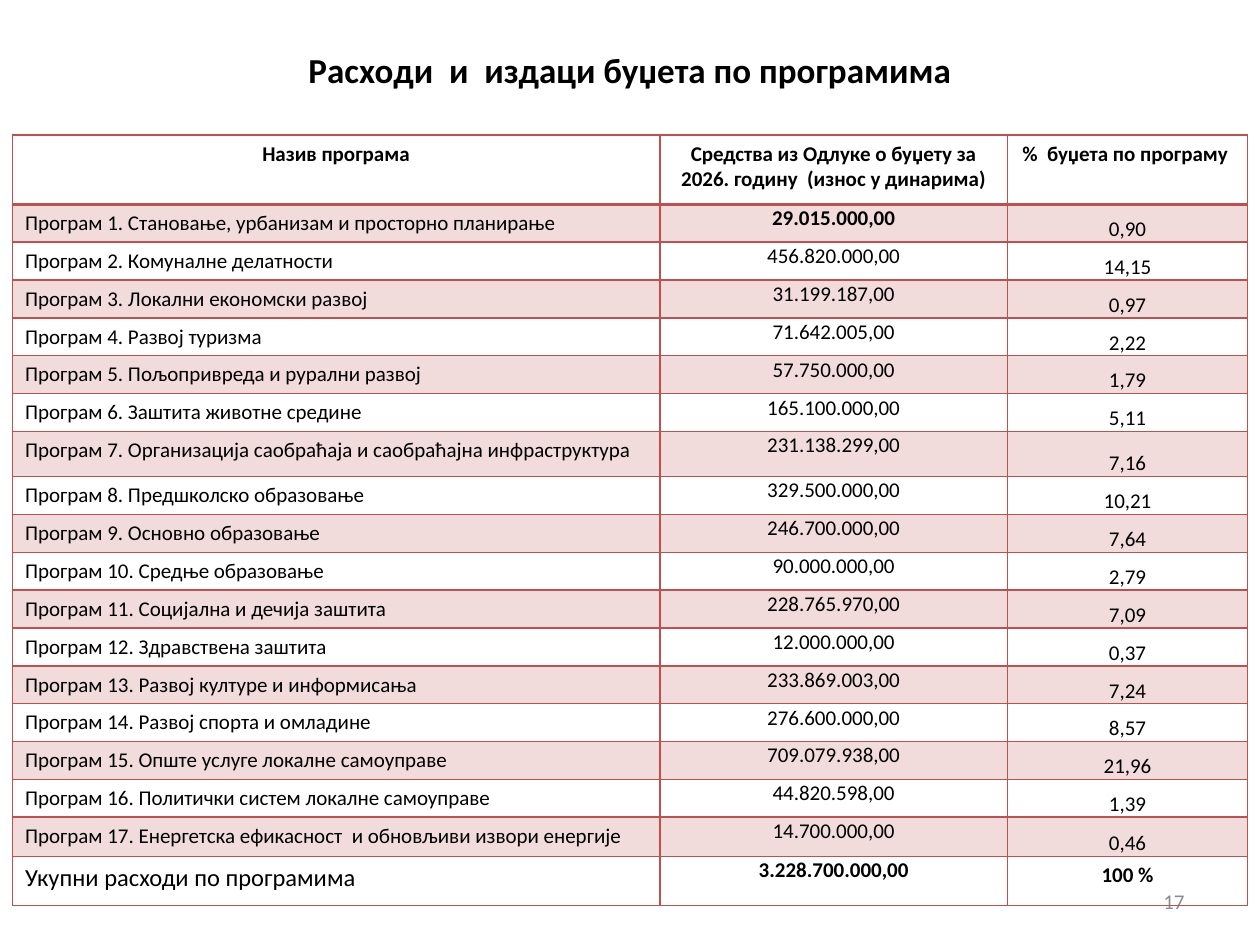
from lxml.etree import SubElement
from pptx import Presentation
from pptx.dml.color import RGBColor
from pptx.enum.text import MSO_ANCHOR, PP_ALIGN
from pptx.oxml.ns import qn
from pptx.util import Cm, Pt

# Content
title = "Расходи  и  издаци буџета по програмима"
page = "17"
head = (
    "Назив програма",
    "Средства из Одлуке о буџету за 2026. годину  (износ у динарима)",
    "%  буџета по програму ",
)
items = [
    ("Становање, урбанизам и просторно планирање", "29.015.000,00", "0,90"),
    ("Комуналне делатности", "456.820.000,00", "14,15"),
    ("Локални економски развој", "31.199.187,00", "0,97"),
    ("Развој туризма", "71.642.005,00", "2,22"),
    ("Пољопривреда и рурални развој", "57.750.000,00", "1,79"),
    ("Заштита животне средине", "165.100.000,00", "5,11"),
    ("Организација саобраћаја и саобраћајна инфраструктура",
     "231.138.299,00", "7,16"),
    ("Предшколско образовање", "329.500.000,00", "10,21"),
    ("Основно образовање", "246.700.000,00", "7,64"),
    ("Средње образовање", "90.000.000,00", "2,79"),
    ("Социјална и дечија заштита", "228.765.970,00", "7,09"),
    ("Здравствена заштита", "12.000.000,00", "0,37"),
    ("Развој културе и информисања", "233.869.003,00", "7,24"),
    ("Развој спорта и омладине", "276.600.000,00", "8,57"),
    ("Опште услуге локалне самоуправе", "709.079.938,00", "21,96"),
    ("Политички систем локалне самоуправе", "44.820.598,00", "1,39"),
    ("Енергетска ефикасност  и обновљиви извори енергије",
     "14.700.000,00", "0,46"),
]
total = ("Укупни расходи по програмима", "3.228.700.000,00", "100 %")

theme = {
    "font": "Calibri", "ink": "000000", "mute": "8C8C8C", "red": "C0504D",
    "tint": 20, "title": 20, "body": 12, "sum": 14, "line": 1, "rule": 2,
}

# Sizes in centimetres
widths = (13.05, 7.01, 4.84)
step = 0.74
tall = {0: 1.4, 7: 0.91, 17: 0.79, 18: 0.99}  # rows that differ from step


def style(par, size, color, bold=False, align=PP_ALIGN.LEFT):
    par.alignment = align
    for run in par.runs:
        font = run.font
        font.name, font.size, font.bold = theme["font"], Pt(size), bold
        font.color.rgb = RGBColor.from_string(color)


def label(slide, text, place, *look):
    frame = slide.shapes.add_textbox(*map(Cm, place)).text_frame
    frame.word_wrap = True
    frame.vertical_anchor = MSO_ANCHOR.MIDDLE
    frame.text = text
    style(frame.paragraphs[0], *look)


def border(cell, row):
    props = cell._tc.get_or_add_tcPr()
    for side in "LRTB":
        thick = (row, side) in ((0, "B"), (1, "T"))
        width = theme["rule" if thick else "line"]
        line = SubElement(props, qn(f"a:ln{side}"), w=str(Pt(width)))
        fill = SubElement(line, qn("a:solidFill"))
        SubElement(fill, qn("a:srgbClr"), val=theme["red"])


def shade(cell):
    cell.fill.solid()
    cell.fill.fore_color.rgb = RGBColor.from_string(theme["red"])
    color = cell._tc.tcPr.find(qn("a:solidFill"))[0]
    SubElement(color, qn("a:alpha"), val=str(theme["tint"] * 1000))


def main():
    deck = Presentation()
    deck.slide_width, deck.slide_height = Cm(25.4), Cm(19.05)
    slide = deck.slides.add_slide(deck.slide_layouts[6])

    # Title and page number
    label(slide, title, (1.88, 0.33, 21.64, 2.16),
          theme["title"], theme["ink"], True, PP_ALIGN.CENTER)
    label(slide, page, (18.21, 17.65, 5.92, 1.02),
          theme["body"], theme["mute"], False, PP_ALIGN.RIGHT)

    # Table grid
    names = [(f"Програм {n}. {name}", cash, part)
             for n, (name, cash, part) in enumerate(items, 1)]
    rows = [head, *names, total]
    last = len(rows) - 1
    highs = [tall.get(r, step) for r in range(len(rows))]
    grid = slide.shapes.add_table(
        len(rows), len(widths), Cm(0.25), Cm(2.72),
        Cm(sum(widths)), Cm(sum(highs))).table
    grid.first_row = grid.horz_banding = False
    for col, width in zip(grid.columns, widths):
        col.width = Cm(width)
    for row, high in zip(grid.rows, highs):
        row.height = Cm(high)

    # Table cells
    for r, row in enumerate(rows):
        for c, text in enumerate(row):
            cell = grid.cell(r, c)
            cell.text_frame.text = text
            bold = r == 0 or (r in (1, last) and c == 1) or (r, c) == (last, 2)
            size = theme["sum" if (r, c) == (last, 0) else "body"]
            align = PP_ALIGN.CENTER if r == 0 or c else PP_ALIGN.LEFT
            style(cell.text_frame.paragraphs[0], size, theme["ink"],
                  bold, align)
            if r and c and (r, c) != (last, 2):
                cell.margin_left = cell.margin_right = Cm(0.03)
                cell.margin_top, cell.margin_bottom = Cm(0.03), 0
            if 0 < r < last and c == 2:
                cell.vertical_anchor = MSO_ANCHOR.BOTTOM
            border(cell, r)
            if r % 2 and r < last:
                shade(cell)
            else:
                cell.fill.background()

    deck.save("out.pptx")


if __name__ == "__main__":
    main()
